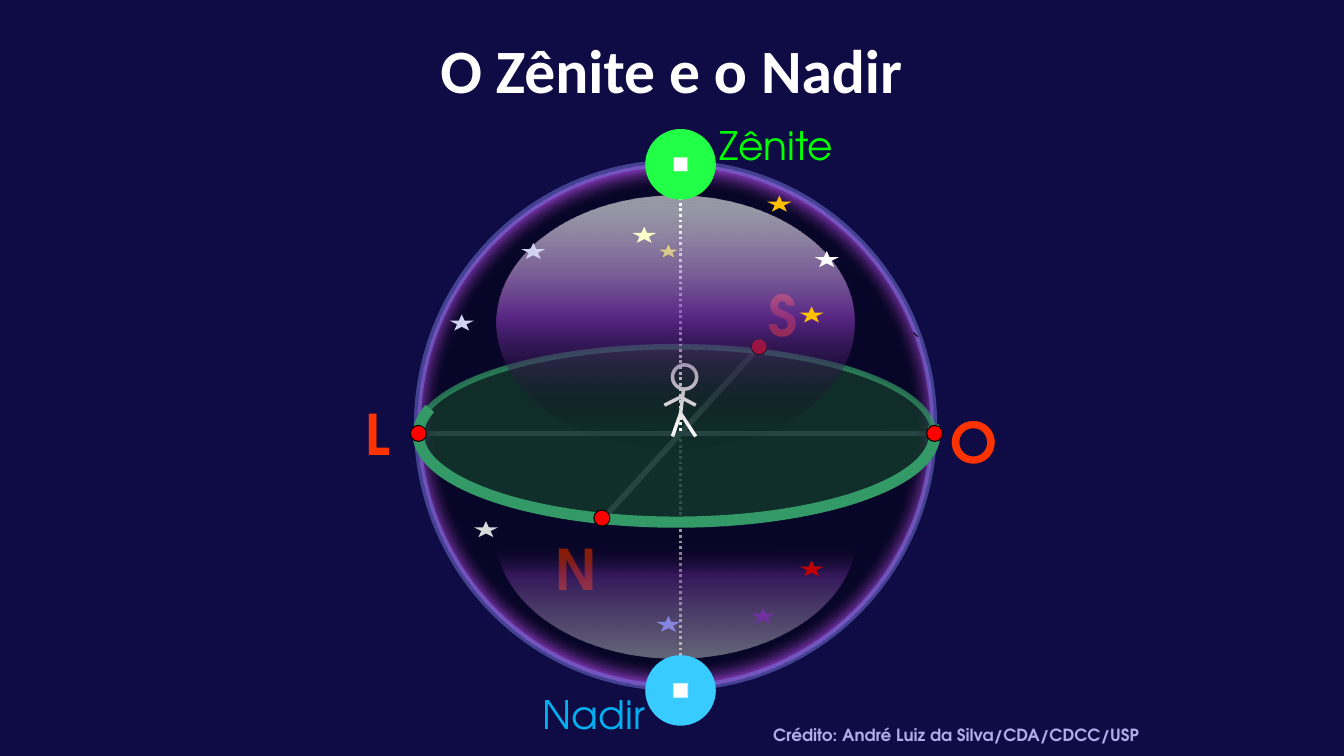
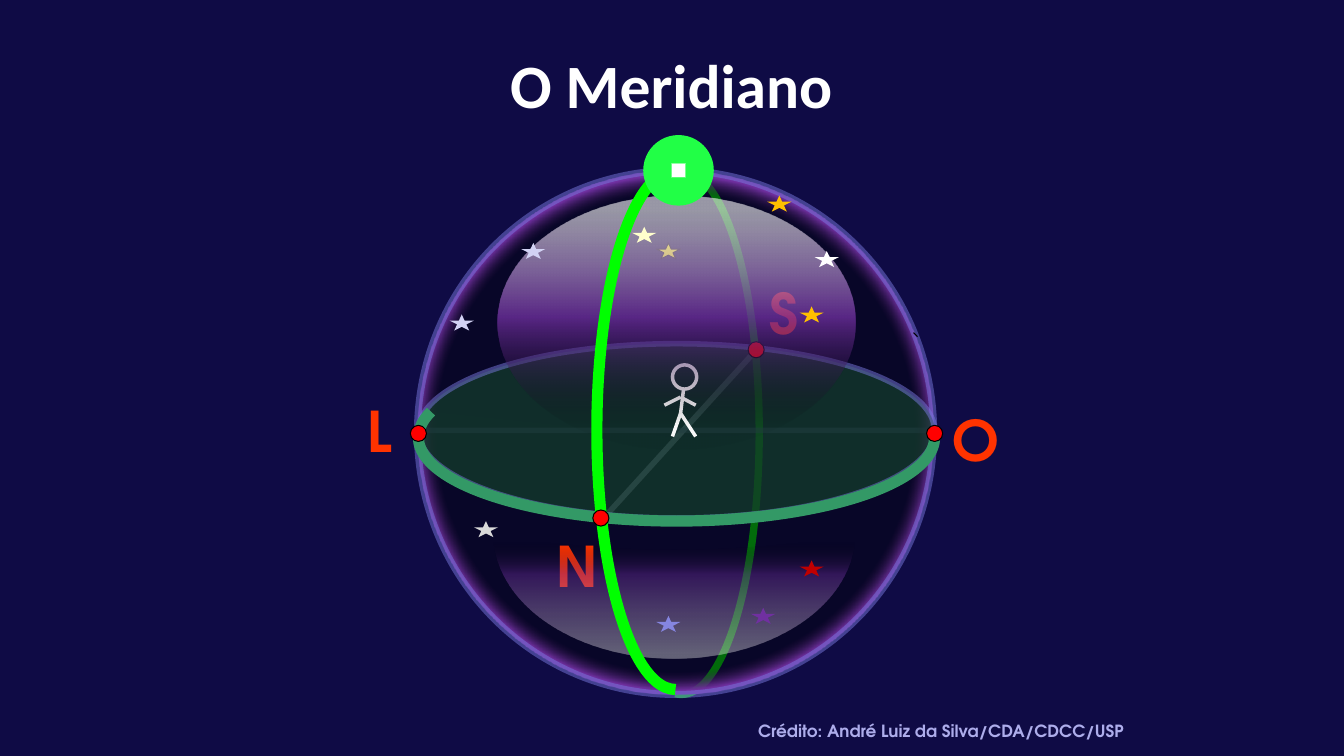
"""Build two slides on the celestial sphere: zenith and nadir, and the meridian."""
from dataclasses import dataclass
from typing import Any, Optional, Union

import lxml.etree
import pptx
import pptx.dml.color
import pptx.enum.dml
import pptx.enum.shapes
import pptx.enum.text
import pptx.oxml.ns
import pptx.util

RGBColor = pptx.dml.color.RGBColor
Preset = pptx.enum.shapes.MSO_SHAPE
Align = pptx.enum.text.PP_ALIGN
qn = pptx.oxml.ns.qn

EMU_PER_PX = 9144
TITLE_FONT = "Calibri"
LABEL_FONT = "TeX Gyre Adventor"

NIGHT = RGBColor(0x0F, 0x0B, 0x45)
WHITE = RGBColor(0xFF, 0xFF, 0xFF)
BLACK = RGBColor(0x00, 0x00, 0x00)
PURPLE = RGBColor(0x70, 0x30, 0xA0)
PERIWINKLE = RGBColor(0x78, 0x78, 0xDE)
LAVENDER = RGBColor(0xA5, 0xA5, 0xE9)
CREDIT_LILAC = RGBColor(0xAD, 0xAD, 0xEB)
GROUND = RGBColor(0x14, 0x3C, 0x2B)
HORIZON_GREEN = RGBColor(0x33, 0x99, 0x66)
LIME = RGBColor(0x00, 0xFF, 0x00)
ZENITH_GREEN = RGBColor(0x21, 0xFF, 0x46)
NADIR_BLUE = RGBColor(0x37, 0xCB, 0xFF)
SKY_BLUE = RGBColor(0x00, 0xB0, 0xF0)
ORANGE_RED = RGBColor(0xFF, 0x33, 0x00)
RED = RGBColor(0xFF, 0x00, 0x00)
DARK_RED = RGBColor(0xC0, 0x00, 0x00)
YELLOW = RGBColor(0xFF, 0xFF, 0x00)
GOLD = RGBColor(0xFF, 0xC0, 0x00)
CREAM = RGBColor(0xFF, 0xFF, 0xCC)
PALE_BLUE = RGBColor(0xD2, 0xD2, 0xF4)
MID_BLUE = RGBColor(0x85, 0x85, 0xE0)
LIGHT_GREY = RGBColor(0xD9, 0xD9, 0xD9)


@dataclass(frozen=True)
class Box:
    left: int
    top: int
    width: int
    height: int


@dataclass(frozen=True)
class Pen:
    color: RGBColor
    points: float
    alpha: int = 100
    dash: Any = None


@dataclass(frozen=True)
class Solid:
    color: RGBColor
    alpha: int = 100


@dataclass(frozen=True)
class Stop:
    position: int
    color: RGBColor
    alpha: int = 100


@dataclass(frozen=True)
class Gradient:
    stops: tuple[Stop, ...]
    outline: Optional[str] = None
    angle: int = 0


@dataclass(frozen=True)
class Star:
    left: int
    top: int
    color: RGBColor


@dataclass(frozen=True)
class Segment:
    x1: int
    y1: int
    x2: int
    y2: int


@dataclass(frozen=True)
class Label:
    text: str
    box: Box
    color: RGBColor
    points: int
    bold: bool = False
    align: Any = Align.LEFT


Fill = Union[Solid, Gradient, None]

THIN_BLACK = Pen(BLACK, 0.75)
FIGURE_PEN = Pen(WHITE, 2.5)
AXIS_PEN = Pen(WHITE, 2, dash=pptx.enum.dml.MSO_LINE.ROUND_DOT)
NORTH_SOUTH_PEN = Pen(LAVENDER, 4)
FAINT_RIM = Pen(PERIWINKLE, 4, 50)
NORTH_SOUTH = Segment(596, 517, 753, 344)
RIM_TICK = Segment(906, 330, 910, 334)
LIMBS = (
    Segment(678, 386, 675, 410),
    Segment(675, 410, 690, 433),
    Segment(675, 410, 667, 433),
    Segment(675, 394, 690, 402),
    Segment(659, 402, 675, 394),
)
STARS = (
    Star(446, 312, PALE_BLUE), Star(517, 241, PALE_BLUE),
    Star(793, 304, GOLD), Star(761, 194, GOLD),
    Star(808, 249, WHITE), Star(627, 225, CREAM),
    Star(745, 603, PURPLE), Star(793, 556, DARK_RED),
    Star(651, 611, MID_BLUE), Star(470, 517, LIGHT_GREY),
)
SPHERE_FILL = Gradient((Stop(65, BLACK, 40), Stop(70, PURPLE)), "circle")
UPPER_GLOW = Gradient((Stop(6, WHITE, 58), Stop(48, PURPLE, 77), Stop(91, BLACK, 2)), angle=90)
LOWER_GLOW = Gradient((Stop(3, WHITE, 37), Stop(68, PURPLE, 41), Stop(94, BLACK, 0)))


def px(length: int) -> pptx.util.Emu:
    return pptx.util.Emu(length * EMU_PER_PX)


def set_alpha(parent: Any, alpha: int) -> None:
    if alpha < 100:
        color = next(parent.iter(qn("a:srgbClr")))
        lxml.etree.SubElement(color, qn("a:alpha"), val=str(alpha * 1000))


def paint_line(shape: Any, pen: Optional[Pen]) -> None:
    if pen is None:
        shape.line.fill.background()
        return
    shape.line.color.rgb = pen.color
    shape.line.width = pptx.util.Pt(pen.points)
    if pen.dash is not None:
        shape.line.dash_style = pen.dash
    set_alpha(shape.element.spPr.find(qn("a:ln")), pen.alpha)


def gradient_element(gradient: Gradient) -> Any:
    element = lxml.etree.Element(qn("a:gradFill"), rotWithShape="1")
    stops = lxml.etree.SubElement(element, qn("a:gsLst"))
    for stop in gradient.stops:
        entry = lxml.etree.SubElement(stops, qn("a:gs"), pos=str(stop.position * 1000))
        lxml.etree.SubElement(entry, qn("a:srgbClr"), val=str(stop.color))
        set_alpha(entry, stop.alpha)
    if gradient.outline:
        outline = lxml.etree.SubElement(element, qn("a:path"), path=gradient.outline)
        centre = dict.fromkeys("ltrb", "50000")
        lxml.etree.SubElement(outline, qn("a:fillToRect"), centre)
    else:
        lxml.etree.SubElement(element, qn("a:lin"), ang=str(gradient.angle * 60000), scaled="0")
    return element


def paint_fill(shape: Any, fill: Fill) -> None:
    if fill is None:
        shape.fill.background()
        return
    shape.fill.solid()
    properties = shape.element.spPr
    solid = properties.find(qn("a:solidFill"))
    if isinstance(fill, Gradient):
        properties.replace(solid, gradient_element(fill))
    else:
        shape.fill.fore_color.rgb = fill.color
        set_alpha(properties.find(qn("a:solidFill")), fill.alpha)


def add_figure(shapes: Any, preset: Any, box: Box, fill: Fill = None, pen: Optional[Pen] = None) -> Any:
    shape = shapes.add_shape(preset, px(box.left), px(box.top), px(box.width), px(box.height))
    shape.shadow.inherit = False
    paint_fill(shape, fill)
    paint_line(shape, pen)
    return shape


def add_arc(shapes: Any, box: Box, start: float, end: float, pen: Pen, fill: Fill = None) -> None:
    shape = add_figure(shapes, Preset.ARC, box, fill, pen)
    for index, degrees in enumerate((start, end)):
        shape.adjustments[index] = degrees * 0.6


def add_segment(shapes: Any, segment: Segment, pen: Pen) -> None:
    connector = shapes.add_connector(
        pptx.enum.shapes.MSO_CONNECTOR.STRAIGHT,
        px(segment.x1), px(segment.y1), px(segment.x2), px(segment.y2),
    )
    paint_line(connector, pen)
    lxml.etree.SubElement(connector.element.spPr, qn("a:effectLst"))


def add_run(paragraph: Any, text: str, font: str, points: int, color: RGBColor, bold: bool) -> None:
    run = paragraph.add_run()
    run.text = text
    run.font.name = font
    run.font.size = pptx.util.Pt(points)
    run.font.bold = bold
    run.font.color.rgb = color


def add_label(shapes: Any, label: Label) -> None:
    box = label.box
    frame = shapes.add_textbox(px(box.left), px(box.top), px(box.width), px(box.height)).text_frame
    frame.word_wrap = True
    frame.auto_size = pptx.enum.text.MSO_AUTO_SIZE.SHAPE_TO_FIT_TEXT
    paragraph = frame.paragraphs[0]
    paragraph.alignment = label.align
    add_run(paragraph, label.text, LABEL_FONT, label.points, label.color, label.bold)


def add_cardinal(shapes: Any, letter: str, left: int, top: int) -> None:
    add_label(shapes, Label(letter, Box(left, top, 39, 77), ORANGE_RED, 40, True))


def add_credit(shapes: Any, left: int, top: int, width: int) -> None:
    text = "Crédito: André Luiz da Silva/CDA/CDCC/USP"
    add_label(shapes, Label(text, Box(left, top, width, 30), CREDIT_LILAC, 12, True))


def add_titled_slide(presentation: Any, text: str, top: int) -> Any:
    slide = presentation.slides.add_slide(presentation.slide_layouts[5])
    title = slide.shapes.title
    title.left, title.top, title.width, title.height = px(241), px(top), px(850), px(125)
    title.text_frame.vertical_anchor = pptx.enum.text.MSO_ANCHOR.MIDDLE
    paragraph = title.text_frame.paragraphs[0]
    paragraph.alignment = Align.CENTER
    add_run(paragraph, text, TITLE_FONT, 44, WHITE, True)
    return slide.shapes


def add_sphere(shapes: Any, top: int) -> None:
    add_figure(shapes, Preset.OVAL, Box(414, top, 512, 520), SPHERE_FILL, Pen(PERIWINKLE, 5, 50))


def add_horizon(shapes: Any, left: int, top: int, pen: Pen) -> None:
    add_figure(shapes, Preset.OVAL, Box(left, top, 512, 173), Solid(GROUND, 73), pen)


def add_front_horizon(shapes: Any, top: int, height: int) -> None:
    add_arc(shapes, Box(415, top, 512, height), 358, 186, Pen(HORIZON_GREEN, 8), Solid(GROUND, 7))


def add_star(shapes: Any, star: Star, pen: Optional[Pen] = None) -> None:
    add_figure(shapes, Preset.STAR_5_POINT, Box(star.left, star.top, 24, 16), Solid(star.color), pen)


def add_observer(shapes: Any) -> None:
    add_star(shapes, Star(651, 241, YELLOW), THIN_BLACK)
    figure = shapes.add_group_shape().shapes
    add_figure(figure, Preset.OVAL, Box(667, 362, 24, 24), None, FIGURE_PEN)
    for limb in LIMBS:
        add_segment(figure, limb, FIGURE_PEN)


def add_dots(shapes: Any, *corners: tuple[int, int]) -> None:
    for left, top in corners:
        add_figure(shapes, Preset.OVAL, Box(left, top, 16, 16), Solid(RED), THIN_BLACK)


def add_glow(shapes: Any, upper_left: int, lower_left: int) -> None:
    add_figure(shapes, Preset.OVAL, Box(upper_left, 194, 354, 252), UPPER_GLOW)
    moon = add_figure(shapes, Preset.MOON, Box(lower_left, 413, 123, 358), LOWER_GLOW)
    moon.adjustments[0] = 0.875
    moon.rotation = 270


def add_stars(shapes: Any) -> None:
    group = shapes.add_group_shape().shapes
    for star in STARS:
        add_star(group, star)


def add_pole(shapes: Any, left: int, top: int, color: RGBColor, inner: int, outer: int) -> None:
    fill = Gradient((Stop(18, WHITE), Stop(inner, color), Stop(outer, color, 2)), "shape")
    add_figure(shapes, Preset.OVAL, Box(left, top, 70, 70), fill)


def build_zenith_slide(presentation: Any) -> None:
    shapes = add_titled_slide(presentation, "O Zênite e o Nadir", 6)
    add_segment(shapes, Segment(675, 430, 675, 682), AXIS_PEN)
    add_segment(shapes, NORTH_SOUTH, NORTH_SOUTH_PEN)
    add_segment(shapes, Segment(416, 430, 928, 430), NORTH_SOUTH_PEN)
    add_cardinal(shapes, "N", 541, 525)
    add_sphere(shapes, 162)
    for letter, left, top in (("L", 353, 391), ("S", 752, 273), ("O", 933, 399)):
        add_cardinal(shapes, letter, left, top)
    add_horizon(shapes, 414, 344, Pen(HORIZON_GREEN, 4, 70))
    add_segment(shapes, RIM_TICK, THIN_BLACK)
    add_segment(shapes, Segment(675, 162, 675, 430), AXIS_PEN)
    add_front_horizon(shapes, 344, 174)
    add_observer(shapes)
    add_dots(shapes, (407, 422), (745, 336), (589, 506), (919, 422))
    add_glow(shapes, 493, 609)
    add_stars(shapes)
    add_label(shapes, Label("Zênite", Box(684, 115, 172, 57), LIME, 28, align=Align.CENTER))
    add_label(shapes, Label("Nadir", Box(503, 680, 172, 57), SKY_BLUE, 28, align=Align.CENTER))
    add_credit(shapes, 757, 714, 406)
    add_pole(shapes, 640, 128, ZENITH_GREEN, 21, 82)
    add_pole(shapes, 640, 650, NADIR_BLUE, 23, 77)


def build_meridian_slide(presentation: Any) -> None:
    shapes = add_titled_slide(presentation, "O Meridiano", 21)
    add_segment(shapes, NORTH_SOUTH, NORTH_SOUTH_PEN)
    add_arc(shapes, Box(599, 169, 154, 520), 270.74, 91.39, Pen(LIME, 5.25, 70))
    add_segment(shapes, Segment(417, 427, 929, 427), FAINT_RIM)
    add_sphere(shapes, 169)
    add_horizon(shapes, 415, 341, FAINT_RIM)
    for letter, left, top in (("N", 542, 522), ("L", 355, 388), ("S", 753, 271), ("O", 935, 397)):
        add_cardinal(shapes, letter, left, top)
    add_segment(shapes, RIM_TICK, THIN_BLACK)
    add_front_horizon(shapes, 351, 166)
    add_observer(shapes)
    add_dots(shapes, (407, 422), (742, 339), (919, 422))
    add_glow(shapes, 494, 607)
    add_arc(shapes, Box(592, 169, 156, 515), 90, 276, Pen(LIME, 8))
    add_dots(shapes, (588, 506))
    add_stars(shapes)
    add_credit(shapes, 742, 710, 445)
    add_pole(shapes, 638, 134, ZENITH_GREEN, 21, 82)


def main() -> None:
    presentation = pptx.Presentation()
    presentation.slide_width, presentation.slide_height = px(1333), px(750)
    background = presentation.slide_master.background.fill
    background.solid()
    background.fore_color.rgb = NIGHT
    build_zenith_slide(presentation)
    build_meridian_slide(presentation)
    presentation.save("out.pptx")


if __name__ == "__main__":
    main()
